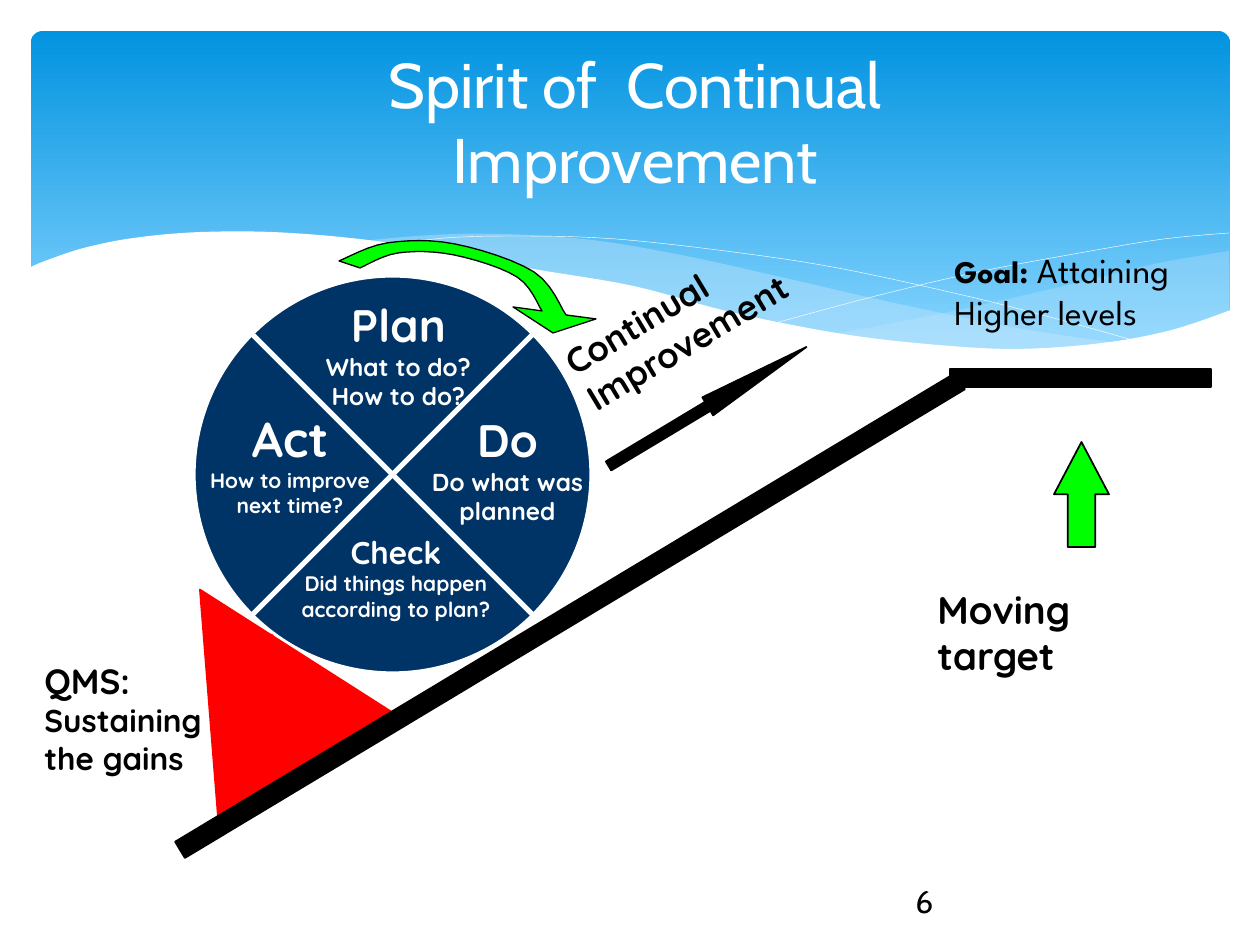
from lxml import etree
from pptx import Presentation, util as u
from pptx.dml.color import RGBColor
from pptx.enum import shapes, text
from pptx.oxml.ns import qn

PX = 914400 / 126
COLORS = {"sky_top": "0293E0", "sky_end": "83D3FE", "mist": "C6E7FC", "white": "FFFFFF",
          "black": "000000", "navy": "003366", "green": "00FF00", "red": "FF0000"}
SHAPE = shapes.MSO_SHAPE
SLOPE_ANGLE = 329


def px(value):
    return round(value * PX)


def color(name):
    return RGBColor.from_string(COLORS[name])


def paint(shape, fill=None, line=None, width=1.0, opacity=100):
    shape.shadow.inherit = False
    if fill:
        shape.fill.solid()
        shape.fill.fore_color.rgb = color(fill)
        if opacity < 100:
            tint = shape.fill._xPr.find(qn("a:solidFill"))[0]
            etree.SubElement(tint, qn("a:alpha"), val=str(opacity * 1000))
    else:
        shape.fill.background()
    if line:
        shape.line.color.rgb = color(line)
        shape.line.width = u.Pt(width)
    else:
        shape.line.fill.background()


def add_preset(slide, kind, box, fill, line, width=1.0, rotation=0, adjustments=()):
    shape = slide.shapes.add_shape(kind, *map(px, box))
    for index, value in enumerate(adjustments):
        shape.adjustments[index] = value
    shape.rotation = rotation
    paint(shape, fill, line, width)
    return shape


def add_line(slide, start, end, line, width):
    connector = slide.shapes.add_connector(
        shapes.MSO_CONNECTOR.STRAIGHT, *map(px, (*start, *end)))
    connector.line.color.rgb = color(line)
    connector.line.width = u.Pt(width)
    etree.SubElement(connector._element.spPr, qn("a:effectLst"))


def smooth(points, steps=6):
    """Catmull-Rom curve through the points."""
    padded = [points[0], *points, points[-1]]
    curve = [points[0]]
    for a, b, c, d in zip(padded, padded[1:], padded[2:], padded[3:]):
        for step in range(1, steps + 1):
            t = step / steps
            curve.append(tuple(
                (2 * q + (r - p) * t + (2 * p - 5 * q + 4 * r - s) * t ** 2
                 + (3 * q - p - 3 * r + s) * t ** 3) / 2
                for p, q, r, s in zip(a, b, c, d)))
    return curve


def add_outline(slide, left, top, points, close=True, **style):
    placed = [(px(left + x), px(top + y)) for x, y in points]
    builder = slide.shapes.build_freeform(*placed[0])
    builder.add_line_segments(placed[1:], close=close)
    paint(builder.convert_to_shape(), **style)


def add_text(slide, box, paragraphs, font="Quicksand", ink="black", bold=True,
             align=text.PP_ALIGN.LEFT, anchor=text.MSO_ANCHOR.TOP):
    """Each paragraph is a list of (text, size) runs."""
    shape = slide.shapes.add_textbox(*map(px, box))
    frame = shape.text_frame
    frame.word_wrap = True
    frame.vertical_anchor = anchor
    for index, runs in enumerate(paragraphs):
        paragraph = frame.add_paragraph() if index else frame.paragraphs[0]
        paragraph.alignment = align
        for words, size in runs:
            run = paragraph.add_run()
            run.text = words
            run.font.name, run.font.size, run.font.bold = font, u.Pt(size), bold
            run.font.color.rgb = color(ink)
    return shape


def draw_background(slide, left, top):
    sky = add_preset(slide, SHAPE.ROUNDED_RECTANGLE, (left + 31, top + 31, 1199, 340),
                     "sky_top", None, adjustments=[0.034])
    sky.fill.gradient()
    sky.fill.gradient_angle = 270
    for stop, name, position in zip(sky.fill.gradient_stops, ("sky_top", "sky_end"), (0, 0.9)):
        stop.color.rgb = color(name)
        stop.position = position

    # Translucent bands
    right_band = (smooth([(1229, 251), (1159, 263), (1085, 281), (981, 305), (889, 324), (833, 334)])
                  + smooth([(833, 334), (923, 345), (1012, 350), (1100, 346), (1178, 332), (1229, 311)]))
    long_band = (smooth([(1125, 344), (1017, 328), (890, 302), (772, 275), (681, 255),
                         (592, 240), (503, 234), (433, 235), (360, 241)])
                 + smooth([(360, 241), (456, 256), (566, 279), (713, 312), (819, 333),
                           (911, 345), (1003, 350), (1081, 348), (1125, 344)]))
    for band, opacity in ((right_band, 29), (long_band, 40)):
        add_outline(slide, left, top, band, fill="mist", opacity=opacity)

    # Hairline waves
    for wave in ([(389, 246), (445, 238), (524, 236), (616, 239), (733, 252), (838, 268),
                  (958, 294), (1046, 316), (1143, 343)],
                 [(772, 324), (876, 296), (978, 272), (1091, 251), (1164, 239), (1229, 233)]):
        add_outline(slide, left, top, smooth(wave), close=False, line="white", width=0.25)

    # White ground with a wavy upper edge
    ground = smooth([(1231, 310), (1172, 330), (1103, 343), (1019, 349), (937, 345), (842, 334),
                     (730, 312), (633, 286), (527, 268), (397, 244), (290, 233), (203, 232),
                     (134, 238), (84, 248), (45, 261), (29, 268)])
    add_outline(slide, left, top, ground + [(29, 415), (1231, 415)], fill="white")


def place_title(slide, box):
    title = slide.shapes.title
    title.left, title.top, title.width, title.height = map(px, box)
    frame = title.text_frame
    frame.text = "Spirit of  Continual Improvement"
    frame.word_wrap = True
    frame.vertical_anchor = text.MSO_ANCHOR.MIDDLE
    paragraph = frame.paragraphs[0]
    paragraph.alignment = text.PP_ALIGN.CENTER
    font = paragraph.runs[0].font
    font.name, font.size = "Cabin", u.Pt(36)
    font.color.rgb = color("white")


def draw_wheel(slide, left, top, size):
    add_preset(slide, SHAPE.FLOWCHART_SUMMING_JUNCTION, (left, top, size, size),
               "navy", "white", width=3)
    quarters = [
        ((116, 16, 179, 126), ("Plan", 26), ("What to do?", 14), ("How to do?", 14)),
        ((220, 131, 189, 126), ("Do", 26), ("Do what was planned", 14)),
        ((91, 252, 224, 113), ("Check", 18), ("Did things happen according to plan?", 12)),
        ((0, 127, 194, 121), ("Act", 28), ("How to improve next time?", 12)),
    ]
    for (x, y, width, height), *lines in quarters:
        add_text(slide, (left + x, top + y, width, height), [[line] for line in lines],
                 ink="white", align=text.PP_ALIGN.CENTER)

    # Curved turning arrow
    inner = smooth([(349, 36), (324, 2), (261, -20), (205, -22), (167, -7)])
    outer = smooth([(146, -14), (194, -32), (262, -31), (341, -3), (373, 40)])
    head = [(403, 44), (360, 58), (320, 32)]
    add_outline(slide, left, top, inner + outer + head, fill="green", line="black", width=0.75)


def draw_ramp(slide, left, top):
    # Wedge holding the wheel
    add_preset(slide, SHAPE.ISOSCELES_TRIANGLE, (left + 36, top + 340, 203, 204),
               "red", "red", rotation=SLOPE_ANGLE)
    for x1, y1, x2, y2 in ((94, 448, 158, 400), (103, 521, 221, 442)):
        add_line(slide, (left + x1, top + y1), (left + x2, top + y2), "red", 2)

    # Slope and upper level
    add_preset(slide, SHAPE.RECTANGLE, (left, top + 371, 910, 19), "black", "black",
               rotation=SLOPE_ANGLE)
    add_preset(slide, SHAPE.RECTANGLE, (left + 835, top + 134, 261, 18), "black", "black")

    # Direction of improvement
    label = add_text(slide, (left + 424, top + 1, 253, 139),
                     [[("Continual", 20)], [("Improvement", 20)]],
                     anchor=text.MSO_ANCHOR.BOTTOM)
    label.rotation = SLOPE_ANGLE
    add_preset(slide, SHAPE.RIGHT_ARROW, (left + 477, top + 161, 231, 21), "black", "black",
               rotation=SLOPE_ANGLE, adjustments=[0.5, 5.49])


def draw_goal(slide, left, top):
    goal = add_text(slide, (left + 17, top, 305, 105),
                    [[("Goal:", 18), (" Attaining", 20)], [("Higher levels", 20)]],
                    font="League Spartan", bold=False)
    goal.text_frame.paragraphs[0].runs[0].font.bold = True
    add_preset(slide, SHAPE.RIGHT_ARROW, (left + 104, top + 225, 105, 55), "green", "black",
               rotation=270, adjustments=[0.5, 0.949])
    add_text(slide, (left, top + 338, 180, 105), [[("Moving target", 22)]])


def main():
    presentation = Presentation()
    presentation.slide_width, presentation.slide_height = px(1260), px(945)
    slide = presentation.slides.add_slide(presentation.slide_layouts[5])
    draw_background(slide, 0, 0)
    # Bring the title in front of the background
    slide.shapes._spTree.append(slide.shapes.title._element)
    place_title(slide, (199, 42, 872, 158))
    draw_goal(slide, 925, 242)
    add_text(slide, (32, 653, 231, 130), [[("QMS:", 20)], [("Sustaining the gains", 18)]])
    draw_wheel(slide, 193, 275, 399)
    draw_ramp(slide, 115, 235)
    add_text(slide, (903, 876, 294, 50), [[("6", 18)]], font="Cabin", bold=False,
             anchor=text.MSO_ANCHOR.MIDDLE)
    presentation.save("out.pptx")


if __name__ == "__main__":
    main()
